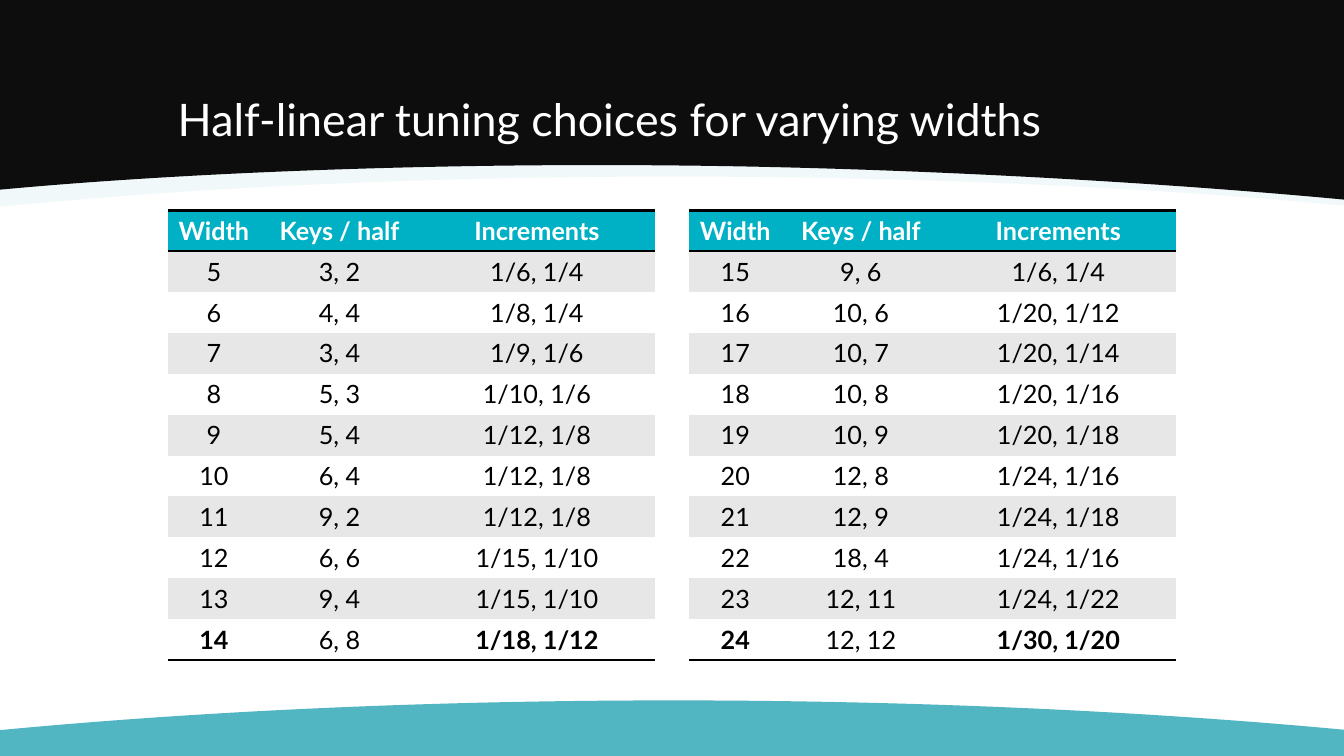
from lxml import etree
from pptx import Presentation
from pptx.dml.color import RGBColor
from pptx.enum.text import MSO_ANCHOR, PP_ALIGN
from pptx.oxml.ns import qn
from pptx.util import Cm, Pt

CENTER = PP_ALIGN.CENTER
BOTTOM = MSO_ANCHOR.BOTTOM

BLACK = RGBColor(0x00, 0x00, 0x00)
WHITE = RGBColor(0xFF, 0xFF, 0xFF)
NEAR_BLACK = RGBColor(0x0D, 0x0D, 0x0D)
PALE_TEAL = RGBColor(0xEA, 0xF6, 0xF8)
SOFT_TEAL = RGBColor(0x52, 0xB5, 0xC2)
HEADER_TEAL = RGBColor(0x00, 0xB1, 0xC5)
BAND_GREY = RGBColor(0xE7, 0xE7, 0xE7)

FONT = "Lato"
NO_STYLE = "{2D5ABB26-0587-4C30-8999-92F81FD0307C}"
SLIDE_W, SLIDE_H = 33.87, 19.05
FOOTER_TOP = 17.65
ROW_H = 1.03
COL_WIDTHS = (2.32, 4.01, 5.94)

HEADINGS = ("Width", "Keys / half", "Increments")
NARROW_WIDTHS = (
    ("5", "3, 2", "1/6, 1/4"),
    ("6", "4, 4", "1/8, 1/4"),
    ("7", "3, 4", "1/9, 1/6"),
    ("8", "5, 3", "1/10, 1/6"),
    ("9", "5, 4", "1/12, 1/8"),
    ("10", "6, 4", "1/12, 1/8"),
    ("11", "9, 2", "1/12, 1/8"),
    ("12", "6, 6", "1/15, 1/10"),
    ("13", "9, 4", "1/15, 1/10"),
    ("14", "6, 8", "1/18, 1/12"),
)
WIDE_WIDTHS = (
    ("15", "9, 6", "1/6, 1/4"),
    ("16", "10, 6", "1/20, 1/12"),
    ("17", "10, 7", "1/20, 1/14"),
    ("18", "10, 8", "1/20, 1/16"),
    ("19", "10, 9", "1/20, 1/18"),
    ("20", "12, 8", "1/24, 1/16"),
    ("21", "12, 9", "1/24, 1/18"),
    ("22", "18, 4", "1/24, 1/16"),
    ("23", "12, 11", "1/24, 1/22"),
    ("24", "12, 12", "1/30, 1/20"),
)


def curve_segments(segments):
    """Turn each three straight segments into one cubic curve."""
    for i in range(0, len(segments), 3):
        cubic = etree.Element(qn("a:cubicBezTo"))
        segments[i].addprevious(cubic)
        for segment in segments[i:i + 3]:
            cubic.append(segment[0])
            segment.getparent().remove(segment)


def add_band(slide, left, top, width, base, curve, color, opacity=None):
    """Fill between a straight base and a two-part curve running right to left."""
    outline = ((0, base), (width, base)) + curve
    points = [(Cm(left + x), Cm(top + y)) for x, y in outline]
    builder = slide.shapes.build_freeform(*points[0])
    builder.add_line_segments(points[1:], close=True)
    sp = builder.convert_to_shape()
    curve_segments(list(sp._element.iter(qn("a:lnTo")))[2:])
    sp.shadow.inherit = False
    sp.line.fill.background()
    sp.fill.solid()
    sp.fill.fore_color.rgb = color
    if opacity is not None:
        clr = sp._element.spPr.find(qn("a:solidFill"))[0]
        etree.SubElement(clr, qn("a:alpha"), val=str(opacity * 1000))


def add_header(slide, left, top, width):
    pale_edge = ((width, 5.18), (28.96, 4.72), (23.16, 4.45), (16.97, 4.45),
                 (10.74, 4.45), (4.93, 4.72), (0, 5.21))
    dark_edge = ((width, 5.03), (28.96, 4.57), (22.58, 4.22), (16.97, 4.17),
                 (11.3, 4.11), (4.93, 4.32), (0, 4.78))
    add_band(slide, left, top, width, 0, pale_edge, PALE_TEAL, opacity=70)
    add_band(slide, left, top, width, 0, dark_edge, NEAR_BLACK)


def add_footer(slide, left, top, width, height):
    edge = ((width, 0.74), (28.96, 0.28), (23.16, 0), (16.97, 0),
            (10.74, 0), (4.93, 0.28), (0, 0.75))
    add_band(slide, left, top, width, height, edge, SOFT_TEAL)


def add_title(slide, text, left, top, width, height):
    box = slide.shapes.add_textbox(Cm(left), Cm(top), Cm(width), Cm(height))
    tf = box.text_frame
    tf.word_wrap = True
    tf.vertical_anchor = BOTTOM
    p = tf.paragraphs[0]
    p.text = text
    p.line_spacing = 0.9
    p.font.name = FONT
    p.font.size = Pt(32)
    p.font.color.rgb = WHITE


def add_border(cell, side):
    tc_pr = cell._tc.get_or_add_tcPr()
    ln = etree.SubElement(tc_pr, qn(f"a:{side}"), w=str(Pt(2)))
    fill = etree.SubElement(ln, qn("a:solidFill"))
    etree.SubElement(fill, qn("a:srgbClr"), val=str(BLACK))


def fill_cell(cell, text, fill, color, bold):
    cell.fill.solid()
    cell.fill.fore_color.rgb = fill
    p = cell.text_frame.paragraphs[0]
    p.text = text
    p.alignment = CENTER
    p.font.name = FONT
    p.font.size = Pt(18)
    p.font.bold = bold
    p.font.color.rgb = color


def add_tuning_table(slide, body, left, top):
    rows = (HEADINGS,) + body
    last = len(rows) - 1
    frame = slide.shapes.add_table(
        len(rows), len(HEADINGS), Cm(left), Cm(top),
        Cm(sum(COL_WIDTHS)), Cm(ROW_H * len(rows)))
    table = frame.table
    table._tbl.tblPr.find(qn("a:tableStyleId")).text = NO_STYLE
    for column, width in zip(table.columns, COL_WIDTHS):
        column.width = Cm(width)
    for i, values in enumerate(rows):
        table.rows[i].height = Cm(ROW_H)
        for j, text in enumerate(values):
            cell = table.cell(i, j)
            if i == 0:
                add_border(cell, "lnT")
            if i in (0, last):
                add_border(cell, "lnB")
            if i == 0:
                fill_cell(cell, text, HEADER_TEAL, WHITE, True)
            else:
                band = BAND_GREY if i % 2 else WHITE
                fill_cell(cell, text, band, BLACK, i == last and j != 1)


def main():
    prs = Presentation()
    prs.slide_width, prs.slide_height = Cm(SLIDE_W), Cm(SLIDE_H)
    slide = prs.slides.add_slide(prs.slide_layouts[6])
    add_header(slide, 0, 0, SLIDE_W)
    add_footer(slide, 0, FOOTER_TOP, SLIDE_W, SLIDE_H - FOOTER_TOP)
    add_title(slide, "Half-linear tuning choices for varying widths",
              4.23, 0.76, 25.4, 3.05)
    add_tuning_table(slide, WIDE_WIDTHS, 17.37, 5.3)
    add_tuning_table(slide, NARROW_WIDTHS, 4.23, 5.3)
    prs.save("out.pptx")


if __name__ == "__main__":
    main()
